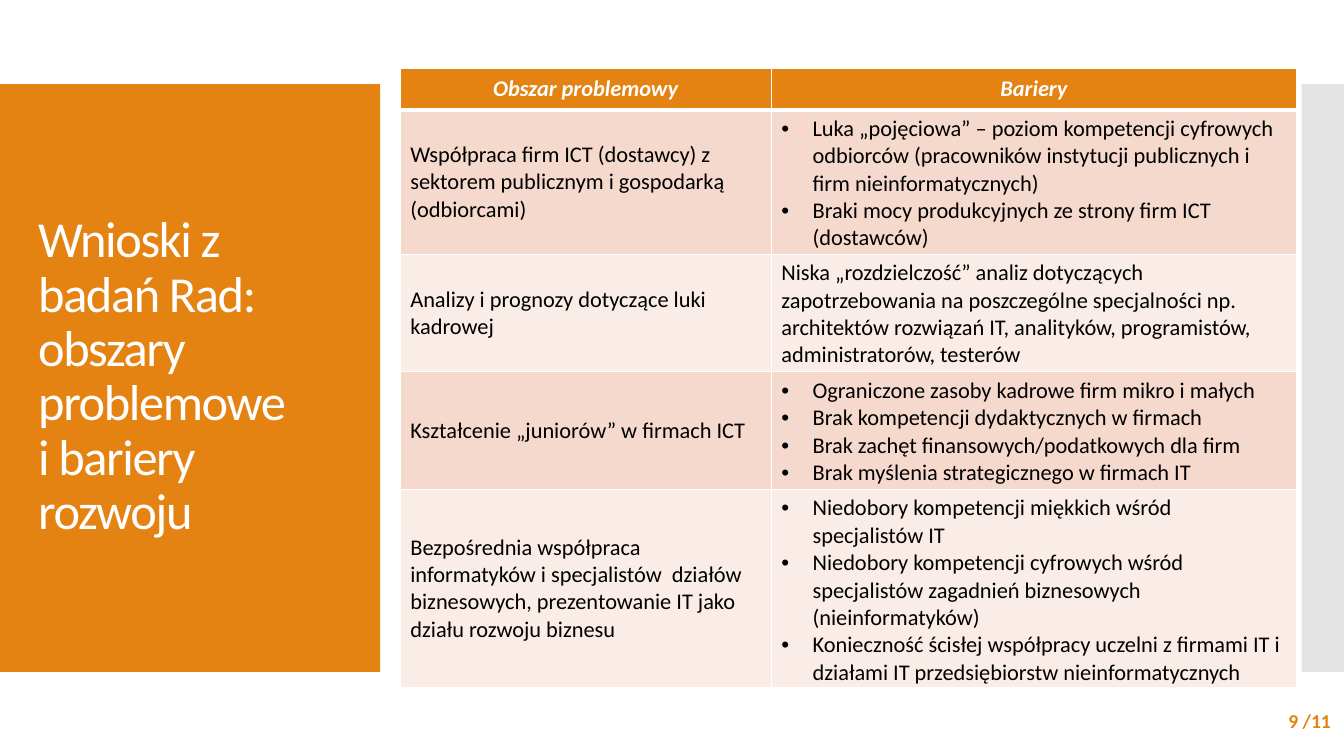
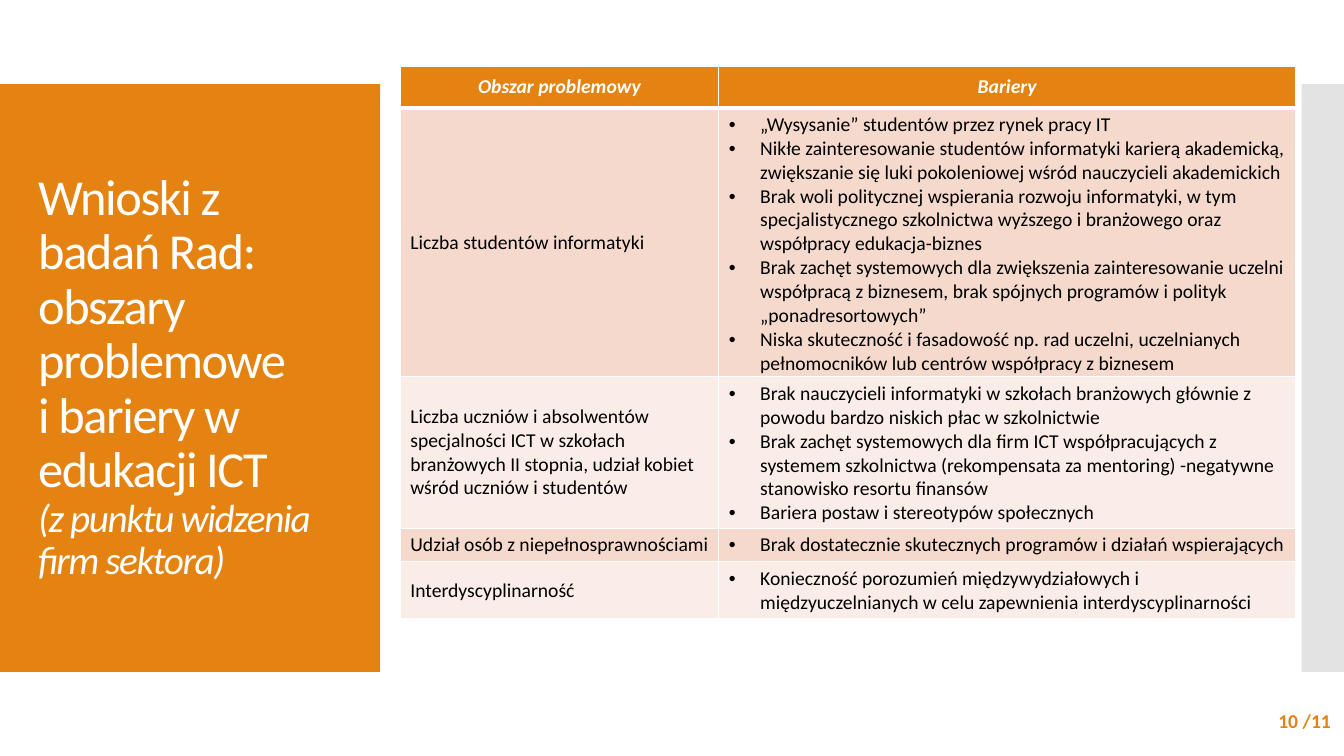
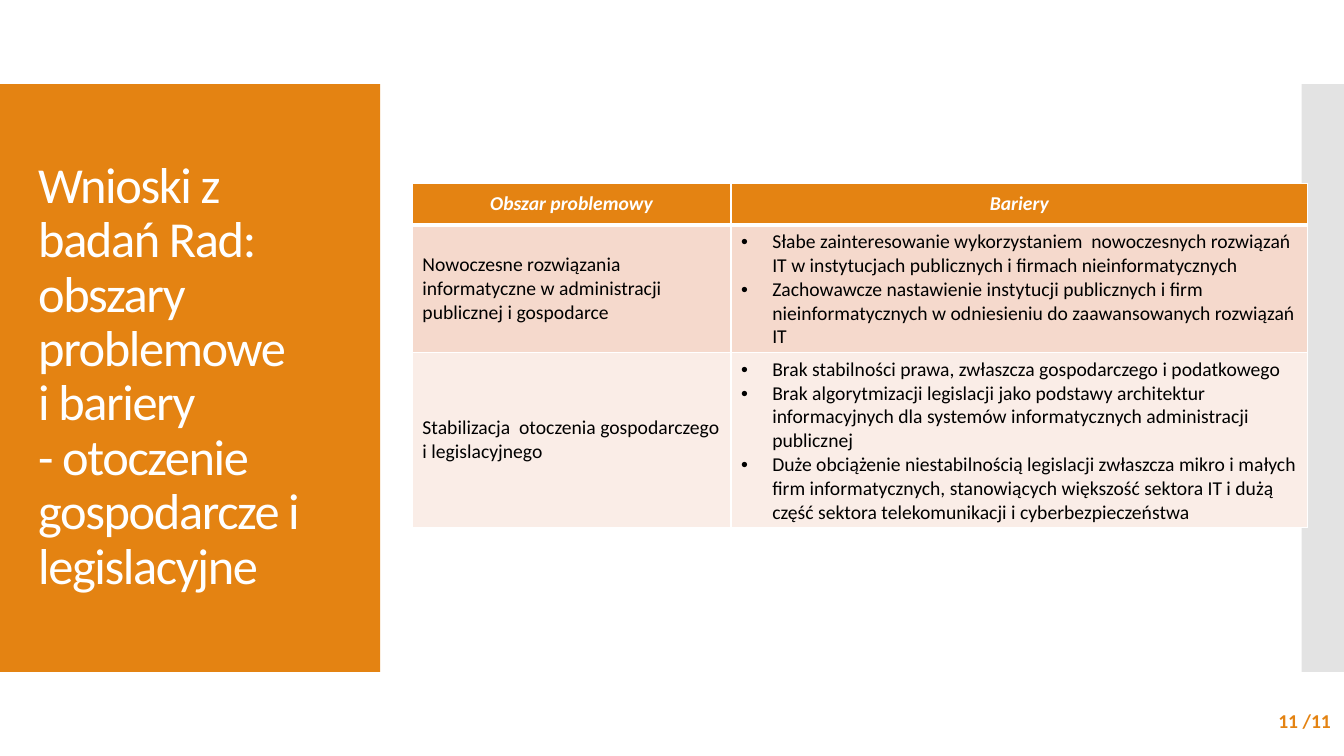
from lxml import etree
from pptx import Presentation
from pptx import util as u
from pptx.dml.color import RGBColor
from pptx.enum import shapes, text
from pptx.oxml.ns import qn

ORANGE = RGBColor(0xE4, 0x83, 0x12)
GREY = RGBColor(0xC8, 0xC8, 0xC8)
WHITE = RGBColor(0xFF, 0xFF, 0xFF)
BLACK = RGBColor(0, 0, 0)
ROW_TINTS = [RGBColor(0xF5, 0xD9, 0xCC), RGBColor(0xFA, 0xED, 0xE7)]
FONT = "Calibri"
BULLET_INDENT = u.Inches(0.31)
LAST_PAGE = 11
HEADINGS = ["Obszar problemowy", "Bariery"]

SECTIONS = [
    {
        "title": "Wnioski z badań Rad: obszary problemowe\vi bariery rozwoju",
        "subtitle": "",
        "left": 3.97, "top": 0.68, "columns": [3.68, 5.21], "size": 16,
        "areas": [
            ("Współpraca firm ICT (dostawcy) z sektorem publicznym i gospodarką (odbiorcami)", [
                "Luka „pojęciowa” – poziom kompetencji cyfrowych odbiorców (pracowników instytucji publicznych i firm nieinformatycznych)",
                "Braki mocy produkcyjnych ze strony firm ICT (dostawców)",
            ]),
            ("Analizy i prognozy dotyczące luki kadrowej",
             "Niska „rozdzielczość” analiz dotyczących zapotrzebowania na poszczególne specjalności np. architektów rozwiązań IT, analityków, programistów, administratorów, testerów"),
            ("Kształcenie „juniorów” w firmach ICT", [
                "Ograniczone zasoby kadrowe firm mikro i małych",
                "Brak kompetencji dydaktycznych w firmach",
                "Brak zachęt finansowych/podatkowych dla firm",
                "Brak myślenia strategicznego w firmach IT",
            ]),
            ("Bezpośrednia współpraca informatyków i specjalistów  działów biznesowych, prezentowanie IT jako działu rozwoju biznesu", [
                "Niedobory kompetencji miękkich wśród specjalistów IT",
                "Niedobory kompetencji cyfrowych wśród specjalistów zagadnień biznesowych (nieinformatyków)",
                "Konieczność ścisłej współpracy uczelni z firmami IT i działami IT przedsiębiorstw nieinformatycznych",
            ]),
        ],
    },
    {
        "title": "Wnioski z badań Rad: obszary problemowe\vi bariery w edukacji ICT",
        "subtitle": "(z punktu widzenia firm sektora)",
        "left": 3.97, "top": 0.66, "columns": [3.16, 5.72], "size": 14,
        "areas": [
            ("Liczba studentów informatyki", [
                "„Wysysanie” studentów przez rynek pracy IT",
                "Nikłe zainteresowanie studentów informatyki karierą akademicką, zwiększanie się luki pokoleniowej wśród nauczycieli akademickich",
                "Brak woli politycznej wspierania rozwoju informatyki, w tym specjalistycznego szkolnictwa wyższego i branżowego oraz współpracy edukacja-biznes",
                "Brak zachęt systemowych dla zwiększenia zainteresowanie uczelni współpracą z biznesem, brak spójnych programów i polityk „ponadresortowych”",
                "Niska skuteczność i fasadowość np. rad uczelni, uczelnianych pełnomocników lub centrów współpracy z biznesem",
            ]),
            ("Liczba uczniów i absolwentów specjalności ICT w szkołach branżowych II stopnia, udział kobiet wśród uczniów i studentów", [
                "Brak nauczycieli informatyki w szkołach branżowych głównie z powodu bardzo niskich płac w szkolnictwie",
                "Brak zachęt systemowych dla firm ICT współpracujących z systemem szkolnictwa (rekompensata za mentoring) -negatywne stanowisko resortu finansów",
                "Bariera postaw i stereotypów społecznych",
            ]),
            ("Udział osób z niepełnosprawnościami", [
                "Brak dostatecznie skutecznych programów i działań wspierających",
            ]),
            ("Interdyscyplinarność", [
                "Konieczność porozumień międzywydziałowych i międzyuczelnianych w celu zapewnienia interdyscyplinarności",
            ]),
        ],
    },
    {
        "title": "Wnioski z badań Rad:\vobszary problemowe\vi bariery\v- otoczenie gospodarcze i legislacyjne",
        "subtitle": "",
        "left": 4.09, "top": 1.82, "columns": [3.16, 5.72], "size": 14,
        "areas": [
            ("Nowoczesne rozwiązania informatyczne w administracji publicznej i gospodarce", [
                "Słabe zainteresowanie wykorzystaniem  nowoczesnych rozwiązań IT w instytucjach publicznych i firmach nieinformatycznych",
                "Zachowawcze nastawienie instytucji publicznych i firm nieinformatycznych w odniesieniu do zaawansowanych rozwiązań IT",
            ]),
            ("Stabilizacja  otoczenia gospodarczego i legislacyjnego", [
                "Brak stabilności prawa, zwłaszcza gospodarczego i podatkowego",
                "Brak algorytmizacji legislacji jako podstawy architektur informacyjnych dla systemów informatycznych administracji publicznej",
                "Duże obciążenie niestabilnością legislacji zwłaszcza mikro i małych firm informatycznych, stanowiących większość sektora IT i dużą część sektora telekomunikacji i cyberbezpieczeństwa",
            ]),
        ],
    },
]


def style(run, size, color, bold=False, italic=False):
    run.font.name = FONT
    run.font.size = u.Pt(size)
    run.font.color.rgb = color
    run.font.bold = bold
    run.font.italic = italic


def add_xml(parent, tag, **attributes):
    values = {key: str(value) for key, value in attributes.items()}
    return etree.SubElement(parent, qn(tag), values)


deck = Presentation()
deck.slide_width = u.Inches(13.33)
deck.slide_height = u.Inches(7.5)
W, H = deck.slide_width, deck.slide_height
BAND_TOP, BAND_HEIGHT = H // 9, H * 7 // 9
PANEL_WIDTH = u.Inches(3.77)
EDGE_WIDTH = u.Inches(0.42)

for page, section in enumerate(SECTIONS, start=LAST_PAGE - len(SECTIONS) + 1):
    slide = deck.slides.add_slide(deck.slide_layouts[6])

    for left, width, color in [(0, PANEL_WIDTH, ORANGE), (W - EDGE_WIDTH, EDGE_WIDTH, GREY)]:
        band = slide.shapes.add_shape(shapes.MSO_SHAPE.RECTANGLE, left, BAND_TOP, width, BAND_HEIGHT)
        band.shadow.inherit = False
        band.line.fill.background()
        band.fill.solid()
        band.fill.fore_color.rgb = color
    add_xml(band.fill._xPr.find(".//" + qn("a:srgbClr")), "a:alpha", val=50000)

    title = slide.shapes.add_textbox(u.Inches(0.28), u.Inches(1.23), u.Inches(3.22), u.Inches(5.03)).text_frame
    title.word_wrap = True
    title.vertical_anchor = text.MSO_ANCHOR.MIDDLE
    title.text = "\v".join(filter(None, [section["title"], section["subtitle"]]))
    title.paragraphs[0].line_spacing = 0.9
    for run in title.paragraphs[0].runs:
        is_subtitle = run.text == section["subtitle"]
        style(run, 28 if is_subtitle else 36, WHITE, italic=is_subtitle)
        run.font._element.set("spc", "-100")

    rows = [HEADINGS] + section["areas"]
    barriers = slide.shapes.add_table(
        len(rows), 2, u.Inches(section["left"]), u.Inches(section["top"]),
        u.Inches(sum(section["columns"])), u.Inches(0.41 * len(rows))).table
    for column, width in zip(barriers.columns, section["columns"]):
        column.width = u.Inches(width)

    for r, row in enumerate(rows):
        header = r == 0
        barriers.rows[r].height = u.Inches(0.41 if header else 0.3)
        for c, content in enumerate(row):
            cell = barriers.cell(r, c)
            cell.vertical_anchor = text.MSO_ANCHOR.MIDDLE
            for side in "LRTB":
                thick = (r, side) in [(0, "B"), (1, "T")]
                border = add_xml(cell._tc.tcPr, "a:ln" + side, w=u.Pt(3 if thick else 1))
                add_xml(add_xml(border, "a:solidFill"), "a:srgbClr", val=WHITE)
            cell.fill.solid()
            cell.fill.fore_color.rgb = ORANGE if header else ROW_TINTS[(r - 1) % 2]

            bulleted = isinstance(content, list)
            cell.text_frame.text = "\n".join(content) if bulleted else content
            for paragraph in cell.text_frame.paragraphs:
                if header:
                    paragraph.alignment = text.PP_ALIGN.CENTER
                if bulleted:
                    properties = paragraph._p.get_or_add_pPr()
                    properties.set("marL", str(BULLET_INDENT))
                    properties.set("indent", str(-BULLET_INDENT))
                    add_xml(properties, "a:buFont", typeface="Arial")
                    add_xml(properties, "a:buChar", char="•")
                style(paragraph.runs[0], section["size"], WHITE if header else BLACK, header, header)

    page_number = slide.shapes.add_textbox(u.Inches(11.63), u.Inches(6.95), u.Inches(1.67), u.Inches(0.4)).text_frame
    page_number.word_wrap = True
    page_number.vertical_anchor = text.MSO_ANCHOR.MIDDLE
    page_number.text = f"{page} /{LAST_PAGE}"
    page_number.paragraphs[0].alignment = text.PP_ALIGN.RIGHT
    style(page_number.paragraphs[0].runs[0], 14, ORANGE, bold=True)

deck.save("out.pptx")
